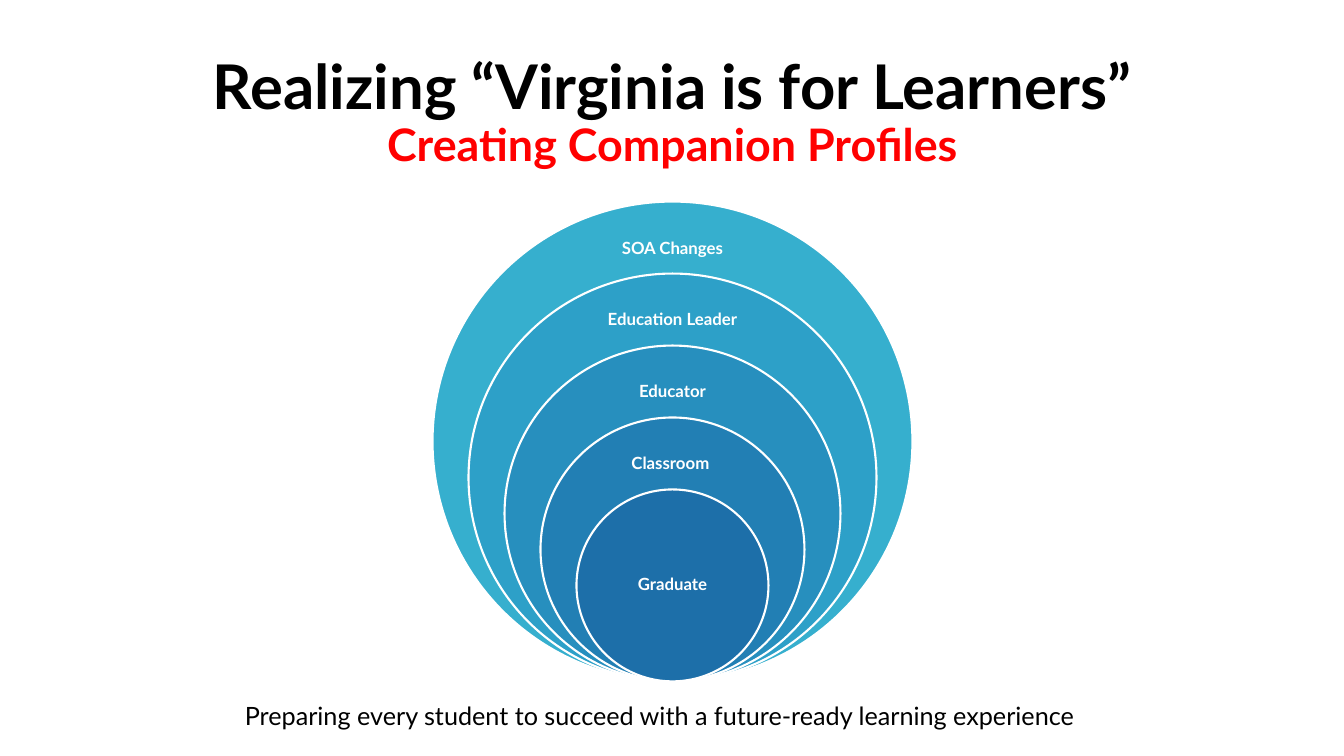
from pptx import Presentation
from pptx.dml.color import RGBColor
from pptx.enum.shapes import MSO_SHAPE
from pptx.enum.text import MSO_ANCHOR, PP_ALIGN
from pptx.util import Inches, Pt

OVAL = MSO_SHAPE.OVAL
MIDDLE, TOP = MSO_ANCHOR.MIDDLE, MSO_ANCHOR.TOP
CENTER, LEFT = PP_ALIGN.CENTER, PP_ALIGN.LEFT
FONT = "Lato"
WHITE, BLACK, RED = "FFFFFF", "000000", "FF0000"
SHRINK_STEP = 0.15
LABEL_DROP = 0.23
RINGS = [
    ("SOA Changes", "36AFCE", 1.78, 0.48),
    ("Education Leader", "2DA0C8", 1.74, 0.47),
    ("Educator", "278FBE", 1.72, 0.46),
    ("Classroom ", "227FB4", 1.41, 0.47),
    ("Graduate", "1D6FA9", 1.35, 0.95),
]


def color(value):
    return RGBColor.from_string(value)


def style(font, size, shade, bold=False):
    font.name = FONT
    font.size = Pt(size)
    font.bold = bold
    font.color.rgb = color(shade)


def add_text(page, box, anchor=TOP, align=LEFT, wrap=True, spacing=1.0):
    frame = page.shapes.add_textbox(*map(Inches, box)).text_frame
    frame.word_wrap = wrap
    frame.vertical_anchor = anchor
    para = frame.paragraphs[0]
    para.alignment = align
    para.line_spacing = spacing
    return para


def add_title(page, box, heading, subtitle):
    para = add_text(page, box, MIDDLE, CENTER, spacing=0.9)
    span = para.add_run()
    span.text = heading
    style(span.font, 44, BLACK, True)
    para.add_line_break()
    span = para.add_run()
    span.text = subtitle
    style(span.font, 32, RED, True)


def add_circle(page, box, fill):
    circle = page.shapes.add_shape(OVAL, *map(Inches, box))
    circle.shadow.inherit = False
    circle.fill.solid()
    circle.fill.fore_color.rgb = color(fill)
    circle.line.color.rgb = color(WHITE)
    circle.line.width = Pt(1.5)


def add_nested_circles(page, box, rings):
    left, top, width, height = box
    middle, bottom = left + width / 2, top + height
    for index, (label, fill, label_width, label_height) in enumerate(rings):
        size = width * (1 - SHRINK_STEP * index)
        circle_top = bottom - size
        add_circle(page, (middle - size / 2, circle_top, size, size), fill)
        innermost = index == len(rings) - 1
        drop = (size - label_height) / 2 if innermost else LABEL_DROP
        label_box = (middle - label_width / 2, circle_top + drop, label_width, label_height)
        para = add_text(page, label_box, MIDDLE, CENTER, spacing=0.9)
        para.text = label
        style(para.font, 12, WHITE, True)


def add_caption(page, box, caption):
    para = add_text(page, box, wrap=False)
    para.text = caption
    style(para.font, 18, BLACK)


def main():
    deck = Presentation()
    deck.slide_width, deck.slide_height = Inches(13.33), Inches(7.5)
    page = deck.slides.add_slide(deck.slide_layouts[6])
    add_title(page, (0.92, 0.4, 11.5, 1.45),
              "Realizing “Virginia is for Learners”", "Creating Companion Profiles")
    add_nested_circles(page, (4.29, 2, 4.76, 4.76), RINGS)
    add_caption(page, (2.33, 6.9, 8.67, 0.4),
                "Preparing every student to succeed with a future-ready learning experience")
    deck.save("out.pptx")


if __name__ == "__main__":
    main()
